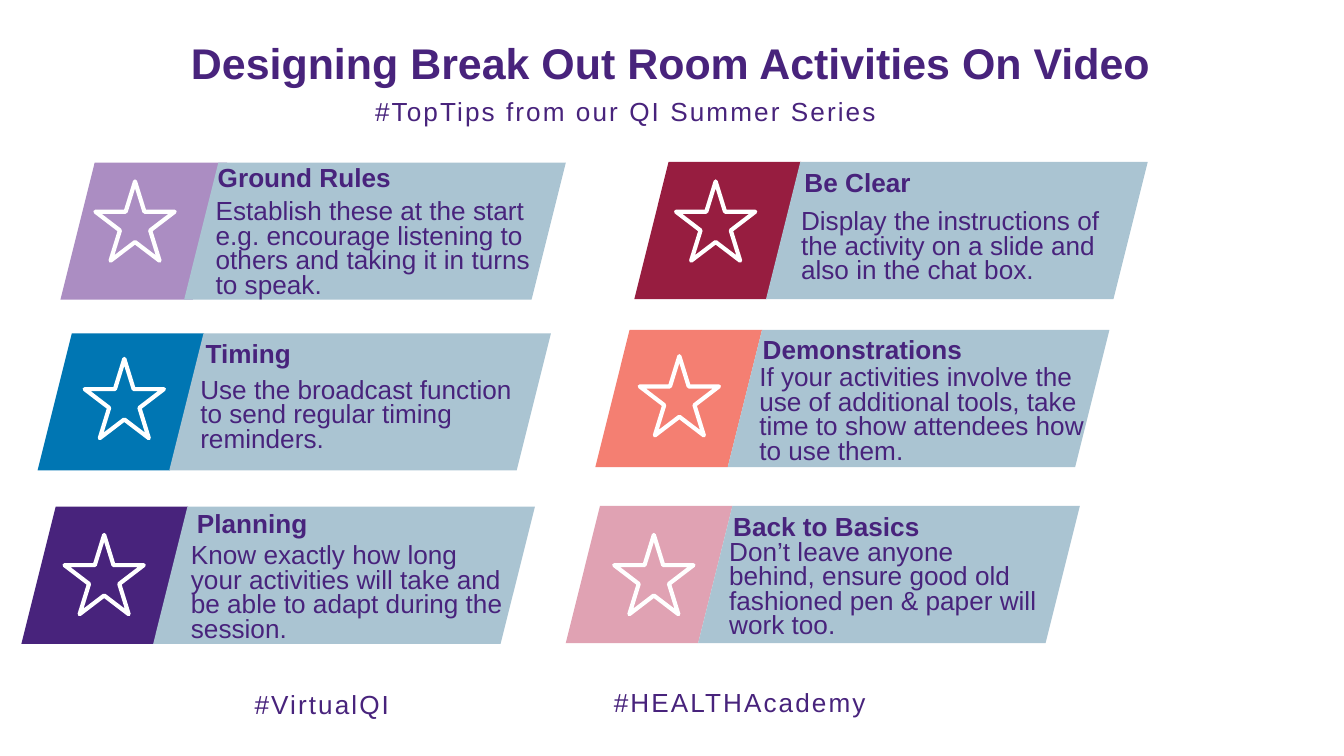
from collections import namedtuple

from pptx import Presentation
from pptx.dml.color import RGBColor
from pptx.enum.shapes import MSO_SHAPE as Shape
from pptx.enum.text import MSO_ANCHOR as Anchor, MSO_AUTO_SIZE as AutoSize, PP_ALIGN as Align
from pptx.util import Inches, Pt

PURPLE = "48237C"
PANEL = "AAC4D2"
WHITE = "FFFFFF"

presentation = Presentation()
presentation.slide_width = Inches(10)
presentation.slide_height = presentation.slide_width * 9 // 16
slide = presentation.slides.add_slide(presentation.slide_layouts[6])
CELL = presentation.slide_width / 100


def add_shape(shapes, kind, left, top, width, height, fill=None, line=None):
    shape = shapes.add_shape(kind, *(round(n * CELL) for n in (left, top, width, height)))
    shape.shadow.inherit = False
    if fill:
        shape.fill.solid()
        shape.fill.fore_color.rgb = RGBColor.from_string(fill)
    else:
        shape.fill.background()
    if line:
        shape.line.color.rgb = RGBColor.from_string(line)
        shape.line.width = Pt(2.25)
    else:
        shape.line.fill.background()


def add_text(shapes, text, left, top, width, height, size=14, bold=False, wrap=False,
             align=Align.LEFT, anchor=Anchor.TOP, leading=None, tracking=None):
    box = shapes.add_textbox(*(round(n * CELL) for n in (left, top, width, height)))
    frame = box.text_frame
    frame.word_wrap = wrap
    frame.auto_size = AutoSize.SHAPE_TO_FIT_TEXT
    frame.vertical_anchor = anchor
    frame.margin_left = frame.margin_right = Inches(0.04)
    frame.margin_top = frame.margin_bottom = Inches(0.02)
    paragraph = frame.paragraphs[0]
    paragraph.alignment = align
    if leading:
        paragraph.line_spacing = Pt(leading)
    run = paragraph.add_run()
    run.text = text
    run.font.name = "Arial"
    run.font.size = Pt(size)
    run.font.bold = bold
    run.font.color.rgb = RGBColor.from_string(PURPLE)
    if tracking:
        run._r.get_or_add_rPr().set("spc", str(round(tracking * 100)))


Card = namedtuple("Card", "left top color panel star heading heading_at body body_at")
cards = [
    Card(4.5, 12.1, "AB8DC2", 9.2, (2.6, 1.4), "Ground Rules", (11.3, -0.3, 13.9),
         "Establish these at the start e.g. encourage listening to others and taking it "
         "in turns to speak.", (11.15, 2.7, 24.4, 7.7)),
    Card(2.8, 24.8, "0076B3", 9.8, (3.5, 1.9), "Timing", (12.1, 0.1, 7.3),
         "Use the broadcast function to send regular timing reminders.",
         (11.7, 3.3, 24.2, 5.8)),
    Card(1.6, 37.7, PURPLE, 9.8, (3.2, 2.1), "Planning", (12.65, -0.1, 9.2),
         "Know exactly how long your activities will take and be able to adapt during "
         "the session.", (12.2, 2.7, 24.2, 7.7)),
    Card(47.2, 12.05, "971D40", 9.8, (3.1, 1.45), "Be Clear", (12.25, 0.15, 8.9),
         "Display the instructions of the activity on a slide and also in the chat box.",
         (12, 3.5, 24.2, 5.8)),
    Card(44.3, 24.55, "F47F72", 9.85, (3.3, 1.95), "Demonstrations", (12.05, 0.05, 15.9),
         "If your activities involve the use of additional tools, take time to show "
         "attendees how to use them.", (11.8, 2.6, 25.4, 7.7)),
    Card(42.1, 37.65, "E0A2B3", 9.85, (3.6, 2.15), "Back to Basics", (12.05, 0.15, 14.9),
         "Don’t leave anyone behind, ensure good old fashioned pen & paper will work too.",
         (11.75, 2.5, 24.2, 7.7)),
]

add_text(slide.shapes, "Designing Break Out Room Activities On Video", 13.6, 2.5, 72.7, 4.2,
         size=23, bold=True, align=Align.CENTER)

for card in cards:
    shapes = slide.shapes.add_group_shape().shapes
    add_shape(shapes, Shape.PARALLELOGRAM, card.left, card.top, 12.4, 10.2, fill=card.color)
    add_shape(shapes, Shape.PARALLELOGRAM, card.left + card.panel, card.top, 28.4, 10.2,
              fill=PANEL)
    star_x, star_y = card.star
    add_shape(shapes, Shape.STAR_5_POINT, card.left + star_x, card.top + star_y, 5.9, 5.9,
              line=WHITE)
    body_x, body_y, body_width, body_height = card.body_at
    add_text(shapes, card.body, card.left + body_x, card.top + body_y, body_width,
             body_height, wrap=True, leading=13.1)
    heading_x, heading_y, heading_width = card.heading_at
    add_text(shapes, card.heading, card.left + heading_x, card.top + heading_y,
             heading_width, 2.7, bold=True, anchor=Anchor.MIDDLE)

for text, left, top, width in [
    ("#TopTips from our QI Summer Series", 27.3, 6.9, 38.5),
    ("#VirtualQI", 18.5, 51, 10.9),
    ("#HEALTHAcademy", 44.7, 50.9, 20.7),
]:
    add_text(slide.shapes, text, left, top, width, 2.7, align=Align.CENTER, tracking=1.1)

presentation.save("out.pptx")
